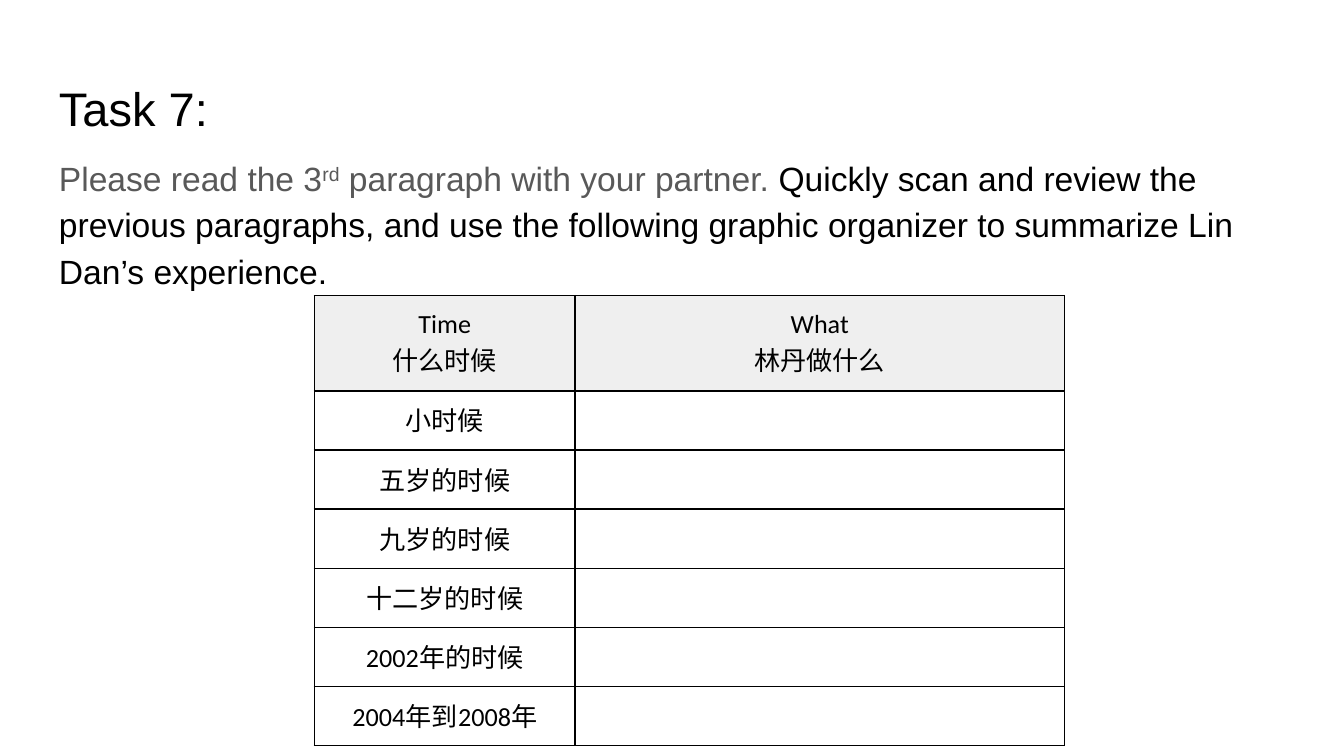
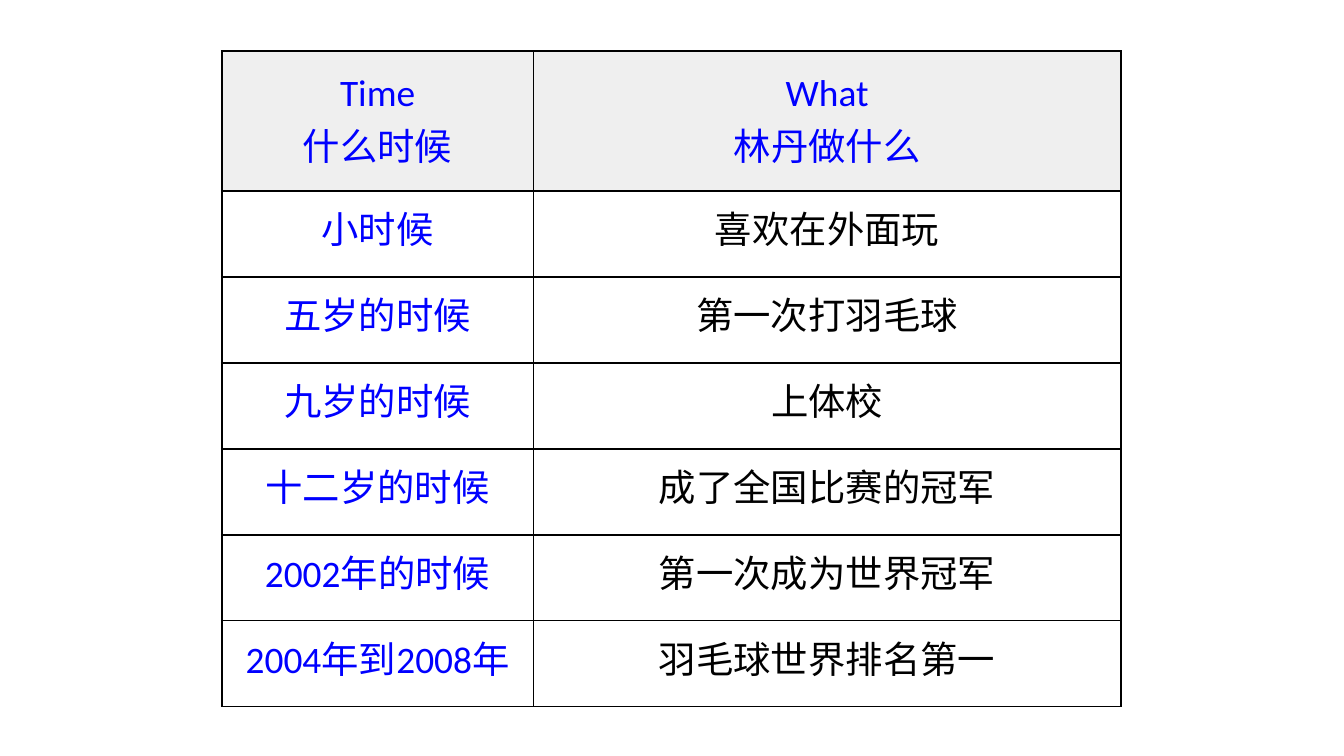
from lxml.etree import SubElement as Sub
from pptx import Presentation
from pptx.dml.color import RGBColor
from pptx.enum.text import MSO_ANCHOR as Anchor, PP_ALIGN as Align
from pptx.oxml.ns import qn
from pptx.util import Inches, Pt

WIDE = 10
HIGH = WIDE * 9 / 16
BLACK, GREY, BLUE, HEAD = "000000", "595959", "0000FF", "EFEFEF"
SANS, TABLE = "Arial", "Calibri"
TITLE = ["Time\n什么时候", "What\n林丹做什么"]
TIMES = ["小时候", "五岁的时候", "九岁的时候", "十二岁的时候",
         "2002年的时候", "2004年到2008年"]
FACTS = ["喜欢在外面玩", "第一次打羽毛球", "上体校", "成了全国比赛的冠军",
         "第一次成为世界冠军", "羽毛球世界排名第一"]


def color(code):
    return RGBColor.from_string(code)


def add_run(para, text, size, face, code, raised=False):
    run = para.add_run()
    run.text = text
    font = run.font
    font.size, font.name = Pt(size), face
    font.color.rgb = color(code)
    if raised:
        font._element.set("baseline", "30000")


def add_text(slide, box, size, parts, line=1.0, after=0):
    frame = slide.shapes.add_textbox(*map(Inches, box)).text_frame
    frame.word_wrap = True
    frame.margin_left = frame.margin_right = Inches(0.1)
    frame.margin_top = frame.margin_bottom = Inches(0.1)
    para = frame.paragraphs[0]
    para.line_spacing, para.space_after = line, Pt(after)
    for text, code, raised in parts:
        add_run(para, text, size, SANS, code, raised)


def add_edges(cell):
    props = cell._tc.get_or_add_tcPr()
    for side in ("a:lnL", "a:lnR", "a:lnT", "a:lnB"):
        edge = Sub(props, qn(side), w=str(Pt(1)))
        Sub(Sub(edge, qn("a:solidFill")), qn("a:srgbClr"), val=BLACK)


def fill_cell(cell, text, size, code, head):
    cell.margin_left = cell.margin_right = Inches(0.07)
    cell.margin_top = cell.margin_bottom = Inches(0.07)
    cell.vertical_anchor = Anchor.MIDDLE if head else Anchor.TOP
    add_edges(cell)
    if head:
        cell.fill.solid()
        cell.fill.fore_color.rgb = color(HEAD)
    else:
        cell.fill.background()
    frame = cell.text_frame
    for i, line in enumerate(text.split("\n")):
        para = frame.add_paragraph() if i else frame.paragraphs[0]
        para.alignment = Align.CENTER
        add_run(para, line, size, TABLE, code)


def add_grid(slide, left, top, widths, heights, size, code, facts):
    rows = [TITLE, *zip(TIMES, facts)]
    tall = [heights[0]] + [heights[1]] * len(TIMES)
    box = (left, top, sum(widths), sum(tall))
    table = slide.shapes.add_table(len(rows), 2, *map(Inches, box)).table
    table.first_row = table.horz_banding = False
    for col, width in zip(table.columns, widths):
        col.width = Inches(width)
    for r, (row, height) in enumerate(zip(rows, tall)):
        table.rows[r].height = Inches(height)
        for c, text in enumerate(row):
            tint = BLACK if r and c else code
            fill_cell(table.cell(r, c), text, size, tint, r == 0)


def task_slide(slide):
    add_text(slide, (0.34, 0.49, 9.32, 0.63), 25.2, [("Task 7:", BLACK, False)])
    add_text(slide, (0.34, 1.03, 9.32, 3.74), 18, [
        ("Please read the 3", GREY, False),
        ("rd", GREY, True),
        (" paragraph with your partner. ", GREY, False),
        ("Quickly scan and review the previous paragraphs, and use the "
         "following graphic organizer to summarize Lin Dan’s experience.",
         BLACK, False),
    ], 1.15, 12)
    add_grid(slide, 2.34, 2.2, (1.94, 3.64), (0.71, 0.44), 14, BLACK,
             [""] * len(TIMES))


def answer_slide(slide):
    add_grid(slide, 1.65, 0.38, (2.32, 4.37), (1.04, 0.64), 20, BLUE, FACTS)


def main():
    deck = Presentation()
    deck.slide_width, deck.slide_height = Inches(WIDE), Inches(HIGH)
    for build in (task_slide, answer_slide):
        build(deck.slides.add_slide(deck.slide_layouts[6]))
    deck.save("out.pptx")


if __name__ == "__main__":
    main()
